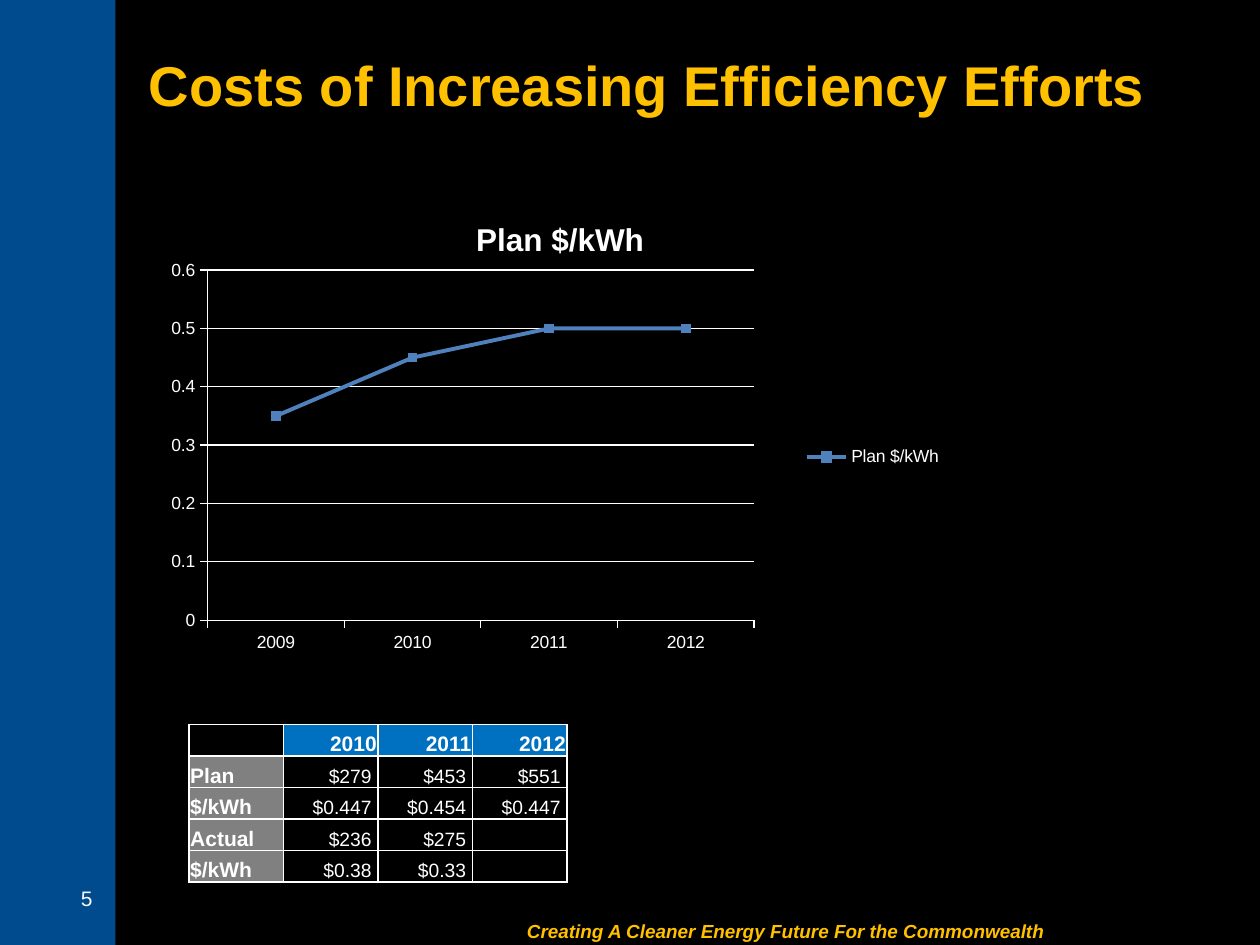
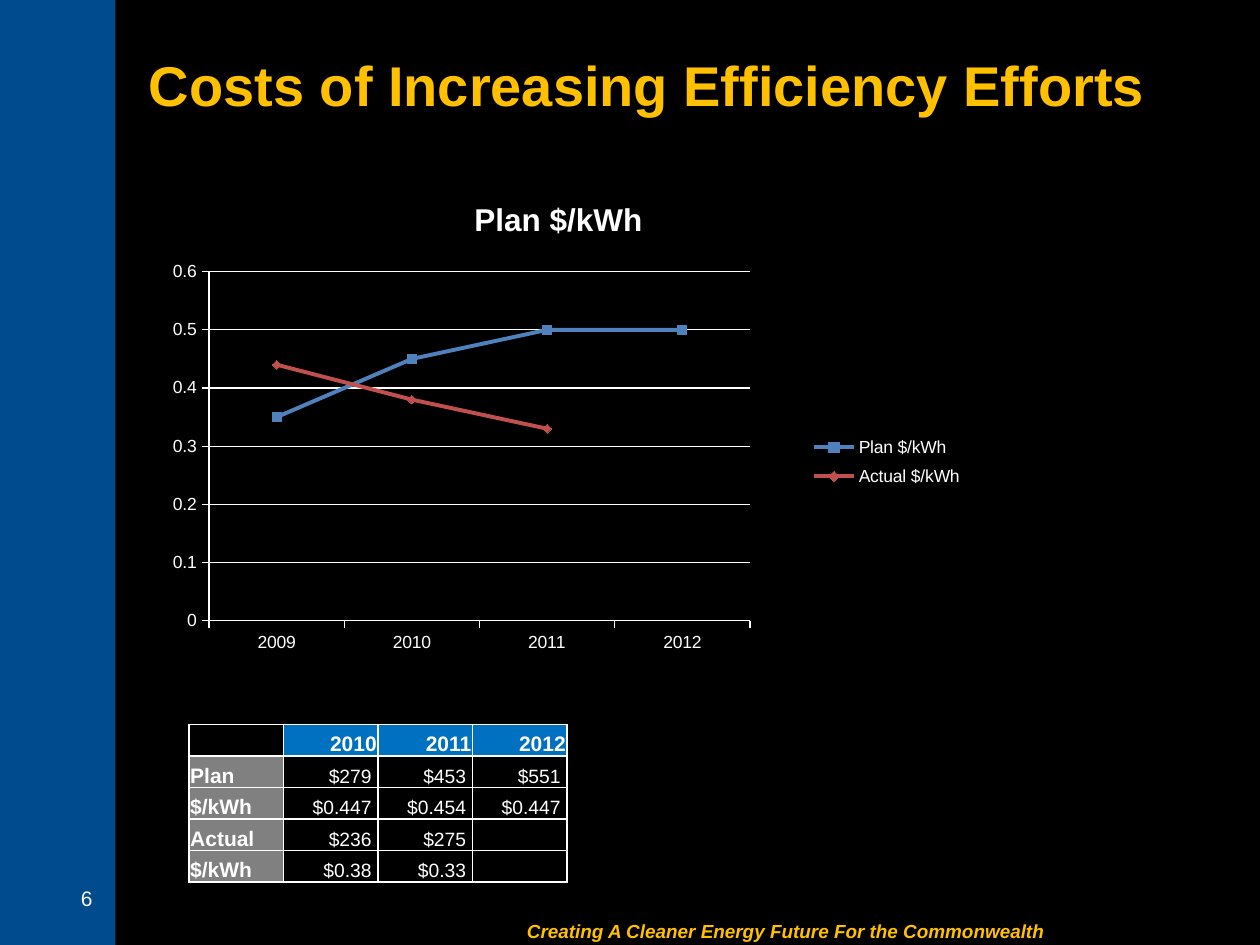
from lxml.etree import SubElement
from pptx import Presentation
from pptx.chart.data import CategoryChartData
from pptx.dml.color import RGBColor
from pptx.enum.chart import XL_CHART_TYPE, XL_LEGEND_POSITION, XL_MARKER_STYLE as Marker, XL_TICK_MARK
from pptx.enum.shapes import MSO_SHAPE
from pptx.enum.text import MSO_ANCHOR as Anchor, PP_ALIGN as Align
from pptx.oxml import parse_xml
from pptx.oxml.ns import nsdecls, qn
from pptx.util import Inches, Pt

COLORS = {
    "background": "000000", "band": "004B8E", "gold": "FFC000", "number": "F8F8F8",
    "white": "FFFFFF", "year": "0070C0", "label": "808080",
    "plan": "4F81BD", "actual": "C0504D",
}
RGB = {name: RGBColor.from_string(code) for name, code in COLORS.items()}
FONT = "Arial"

deck = Presentation()
deck.slide_width, deck.slide_height = Inches(10), Inches(7.5)
UNIT = deck.slide_width // 120  # grid of 120 columns by 90 rows


def write(frame, text, size=12, color="white", bold=False, italic=False,
          align=Align.LEFT, anchor=Anchor.TOP):
    frame.word_wrap = True
    frame.vertical_anchor = anchor
    paragraph = frame.paragraphs[0]
    paragraph.alignment = align
    if not text:  # keeps an empty cell as low as its row
        SubElement(paragraph._p, qn("a:endParaRPr"), sz=str(size * 100))
        return
    run = paragraph.add_run()
    run.text = text
    font = run.font
    font.name, font.size, font.bold, font.italic = FONT, Pt(size), bold, italic
    font.color.rgb = RGB[color]


def arrange(part, index, inner=False, **shares):
    """Place a chart part by shares of the chart's size."""
    for old in part.findall(qn("c:layout")):
        part.remove(old)
    target = '<c:layoutTarget val="inner"/>' if inner else ""
    modes = "".join(f'<c:{key}Mode val="edge"/>' for key in shares if key in "xy")
    values = "".join(f'<c:{key} val="{share}"/>' for key, share in shares.items())
    part.insert(index, parse_xml(
        f'<c:layout {nsdecls("c")}><c:manualLayout>{target}{modes}{values}'
        '</c:manualLayout></c:layout>'))


# Content
YEARS = ["2009", "2010", "2011", "2012"]
PLAN = ("Plan $/kWh", [0.35, 0.45, 0.5, 0.5], "plan", Marker.SQUARE)
ACTUAL = ("Actual $/kWh", [0.44, 0.38, 0.33, None], "actual", Marker.DIAMOND)
COSTS = [
    ["", "2010", "2011", "2012"],
    ["Plan", "$279", "$453", "$551"],
    ["$/kWh", "$0.447", "$0.454", "$0.447"],
    ["Actual", "$236", "$275", ""],
    ["$/kWh", "$0.38", "$0.33", ""],
]
HEADING = dict(size=18, bold=True)
pages = [
    dict(number="5", lines=[PLAN], area=(14, 18, 79, 46), own_heading=True,
         plot=dict(x=0.073, y=0.168, w=0.659, h=0.725),
         legend=dict(x=0.785, y=0.52, w=0.18, h=0.07)),
    dict(number="6", lines=[PLAN, ACTUAL], area=(14, 24, 81, 40), own_heading=False,
         plot=dict(x=0.073, y=0.047, w=0.636, h=0.831),
         legend=dict(x=0.77, y=0.42, w=0.2, h=0.16)),
]

for page in pages:
    slide = deck.slides.add_slide(deck.slide_layouts[6])
    slide.background.fill.solid()
    slide.background.fill.fore_color.rgb = RGB["background"]

    # Side band
    band = slide.shapes.add_shape(MSO_SHAPE.RECTANGLE, 0, 0, 11 * UNIT, 90 * UNIT)
    band.shadow.inherit = False
    band.fill.solid()
    band.fill.fore_color.rgb = RGB["band"]
    band.line.fill.background()

    # Footer, title and slide number
    texts = [
        ((49, 87, 57, 3), "Creating A Cleaner Energy Future For the Commonwealth",
         dict(size=10.8, color="gold", bold=True, italic=True)),
        ((13, 3, 101, 10), "Costs of Increasing Efficiency Efforts",
         dict(size=32, color="gold", bold=True, anchor=Anchor.MIDDLE)),
        ((2, 83, 8, 5), page["number"],
         dict(color="number", align=Align.RIGHT, anchor=Anchor.MIDDLE)),
    ]
    if not page["own_heading"]:
        texts.append(((44, 18.5, 26, 8.5), PLAN[0], HEADING))
    for place, text, style in texts:
        box = slide.shapes.add_textbox(*[int(n * UNIT) for n in place])
        write(box.text_frame, text, **style)

    # Cost table
    costs = slide.shapes.add_table(5, 4, 18 * UNIT, 69 * UNIT, 36 * UNIT, 15 * UNIT).table
    costs.first_row = costs.horz_banding = False
    for r, row in enumerate(COSTS):
        for c, text in enumerate(row):
            cell = costs.cell(r, c)
            is_value = r > 0 and c > 0
            cell.margin_left = cell.margin_top = Inches(0.01)
            cell.margin_right = Inches(0.05 if is_value else 0.01)
            cell.margin_bottom = 0
            write(cell.text_frame, text, size=11 if is_value else 12, bold=not is_value,
                  align=Align.RIGHT if c else Align.LEFT)
            cell.vertical_anchor = Anchor.BOTTOM
            for side in "LRTB":
                edge = SubElement(cell._tc.get_or_add_tcPr(), qn(f"a:ln{side}"), w="12700")
                ink = SubElement(edge, qn("a:solidFill"))
                SubElement(ink, qn("a:srgbClr"), val=COLORS["white"])
            if is_value or not text:
                cell.fill.background()
            else:
                cell.fill.solid()
                cell.fill.fore_color.rgb = RGB["label" if r else "year"]

    # Cost chart
    data = CategoryChartData()
    data.categories = YEARS
    for name, values, *_ in page["lines"]:
        data.add_series(name, values)
    trend = slide.shapes.add_chart(
        XL_CHART_TYPE.LINE_MARKERS, *[n * UNIT for n in page["area"]], data).chart
    trend.font.name, trend.font.size = FONT, Pt(10)
    trend.font.color.rgb = RGB["white"]
    trend.plots[0].vary_by_categories = False
    for line, (_, _, color, marker) in zip(trend.plots[0].series, page["lines"]):
        line.smooth = False
        line.format.line.color.rgb = RGB[color]
        line.format.line.width = Pt(2.25)
        line.marker.style, line.marker.size = marker, 5
        line.marker.format.fill.solid()
        line.marker.format.fill.fore_color.rgb = RGB[color]
        line.marker.format.line.color.rgb = RGB[color]

    # Axes
    cost_axis = trend.value_axis
    cost_axis.minimum_scale, cost_axis.maximum_scale, cost_axis.major_unit = 0, 0.6, 0.1
    cost_axis.tick_labels.number_format = "General"
    cost_axis.tick_labels.number_format_is_linked = False
    cost_axis.has_major_gridlines = True
    for axis in (cost_axis, trend.category_axis):
        axis.major_tick_mark = XL_TICK_MARK.OUTSIDE
    for rule in (cost_axis, trend.category_axis, cost_axis.major_gridlines):
        rule.format.line.color.rgb = RGB["white"]
        rule.format.line.width = Pt(0.75)

    # Legend, heading and plot area
    trend.has_legend = True
    trend.legend.position = XL_LEGEND_POSITION.RIGHT
    trend.legend.include_in_layout = False
    arrange(trend.legend._element, 1, **page["legend"])
    trend.has_title = page["own_heading"]
    if page["own_heading"]:
        write(trend.chart_title.text_frame, PLAN[0], **HEADING)
        arrange(trend.chart_title._element, 1, x=0.39, y=0.05)
    arrange(trend._chartSpace.find(".//" + qn("c:plotArea")), 0, inner=True, **page["plot"])

deck.save("out.pptx")
